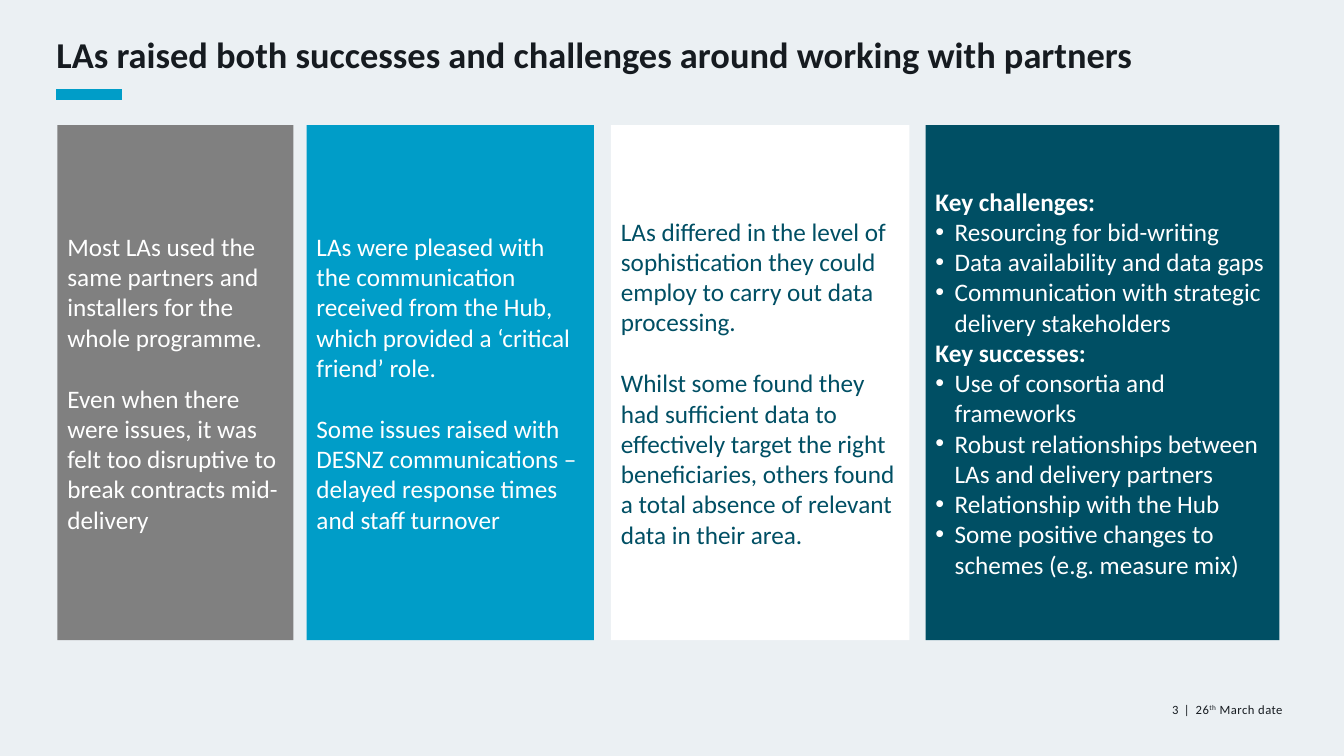
from lxml import etree
from pptx import Presentation
from pptx.dml.color import RGBColor
from pptx.enum.shapes import MSO_CONNECTOR, MSO_SHAPE
from pptx.enum.text import MSO_ANCHOR, MSO_AUTO_SIZE, PP_ALIGN
from pptx.oxml.ns import qn
from pptx.util import Inches, Pt

RECT = MSO_SHAPE.RECTANGLE
TOP, MIDDLE = MSO_ANCHOR.TOP, MSO_ANCHOR.MIDDLE
LEFT, CENTER, RIGHT = PP_ALIGN.LEFT, PP_ALIGN.CENTER, PP_ALIGN.RIGHT

PALE = RGBColor(0xEB, 0xF0, 0xF3)
INK = RGBColor(0x16, 0x1B, 0x20)
GREY = RGBColor(0x80, 0x80, 0x80)
BLUE = RGBColor(0x00, 0x9D, 0xC8)
TEAL = RGBColor(0x00, 0x4F, 0x64)
WHITE = RGBColor(0xFF, 0xFF, 0xFF)


def style(font, size, color, bold=False):
    look = {"name": "Calibri", "size": Pt(size), "bold": bold}
    for key, value in look.items():
        setattr(font, key, value)
    font.color.rgb = color


def set_frame(frame, anchor, side=0, edge=0):
    look = {
        "word_wrap": True, "auto_size": MSO_AUTO_SIZE.NONE,
        "vertical_anchor": anchor,
        "margin_left": Inches(side), "margin_right": Inches(side),
        "margin_top": Inches(edge), "margin_bottom": Inches(edge),
    }
    for key, value in look.items():
        setattr(frame, key, value)


prs = Presentation()
prs.slide_width, prs.slide_height = Inches(13.33), Inches(7.5)
slide = prs.slides.add_slide(prs.slide_layouts[5])
slide.background.fill.solid()
slide.background.fill.fore_color.rgb = PALE

# Title
title = slide.shapes.title
title.left, title.top = Inches(0.56), Inches(0.42)
title.width, title.height = Inches(11.5), Inches(0.34)
set_frame(title.text_frame, TOP)
title.text_frame.text = "LAs raised both successes and challenges around working with partners"
para = title.text_frame.paragraphs[0]
para.alignment = LEFT
para.line_spacing = 0.74
style(para.runs[0].font, 26, INK, True)

# Accent bar under the title
bar = slide.shapes.add_connector(
    MSO_CONNECTOR.STRAIGHT, Inches(0.56), Inches(0.94), Inches(1.21), Inches(0.94))
bar.line.color.rgb = BLUE
bar.line.width = Pt(7.5)
etree.SubElement(bar._element.spPr, qn("a:effectLst"))

# Panels: left, width, fill, text colour, paragraphs as (kind, text)
panels = [
    (0.57, 2.34, GREY, WHITE, [
        ("plain", "Most LAs used the same partners and installers for the whole programme."),
        ("plain", "Even when there were issues, it was felt too disruptive to "
                  "break contracts mid-delivery"),
    ]),
    (3.04, 2.85, BLUE, WHITE, [
        ("plain", "LAs were pleased with the communication received from the Hub, "
                  "which provided a ‘critical friend’ role."),
        ("plain", "Some issues raised with DESNZ communications – "
                  "delayed response times and staff turnover"),
    ]),
    (6.06, 2.96, WHITE, TEAL, [
        ("plain", "LAs differed in the level of sophistication they could employ "
                  "to carry out data processing."),
        ("plain", "Whilst some found they had sufficient data to effectively target "
                  "the right beneficiaries, others found a total absence of "
                  "relevant data in their area."),
    ]),
    (9.18, 3.51, TEAL, WHITE, [
        ("head", "Key challenges:"),
        ("bullet", "Resourcing for bid-writing"),
        ("bullet", "Data availability and data gaps"),
        ("bullet", "Communication with strategic delivery stakeholders"),
        ("head", "Key successes:"),
        ("bullet", "Use of consortia and frameworks"),
        ("bullet", "Robust relationships between LAs and delivery partners"),
        ("bullet", "Relationship with the Hub"),
        ("bullet", "Some positive changes to schemes (e.g. measure mix)"),
    ]),
]
for left, width, fill, color, lines in panels:
    panel = slide.shapes.add_shape(
        RECT, Inches(left), Inches(1.24), Inches(width), Inches(5.11))
    panel.shadow.inherit = False
    panel.fill.solid()
    panel.fill.fore_color.rgb = fill
    panel.line.fill.background()
    frame = panel.text_frame
    set_frame(frame, MIDDLE, 0.1, 0.05)
    for i, (kind, text) in enumerate(lines):
        para = frame.add_paragraph() if i else frame.paragraphs[0]
        para.alignment = LEFT
        if kind == "plain" and i:
            para.space_before = Pt(22)
        if kind == "bullet":
            props = para._p.get_or_add_pPr()
            props.set("marL", str(Inches(0.19)))
            props.set("indent", str(Inches(-0.19)))
            etree.SubElement(props, qn("a:buFont"), typeface="Arial")
            etree.SubElement(props, qn("a:buChar"), char="•")
        run = para.add_run()
        run.text = text
        style(run.font, 18, color, kind == "head")

# Footer: left, width, alignment, anchor, letter spacing, runs as (text, raise)
footer = [
    (11.31, 0.38, RIGHT, MIDDLE, 0, [("3", 0)]),
    (11.71, 0.12, CENTER, TOP, 0, [("|", 0)]),
    (11.86, 1.04, LEFT, MIDDLE, 30, [("26", 0), ("th", 30000), (" March date", 0)]),
]
for left, width, align, anchor, gap, parts in footer:
    box = slide.shapes.add_textbox(
        Inches(left), Inches(6.96), Inches(width), Inches(0.15))
    set_frame(box.text_frame, anchor)
    para = box.text_frame.paragraphs[0]
    para.alignment = align
    for text, lift in parts:
        run = para.add_run()
        run.text = text
        style(run.font, 9, INK)
        props = run._r.get_or_add_rPr()
        props.set("spc", str(gap))
        props.set("baseline", str(lift))

prs.save("out.pptx")
